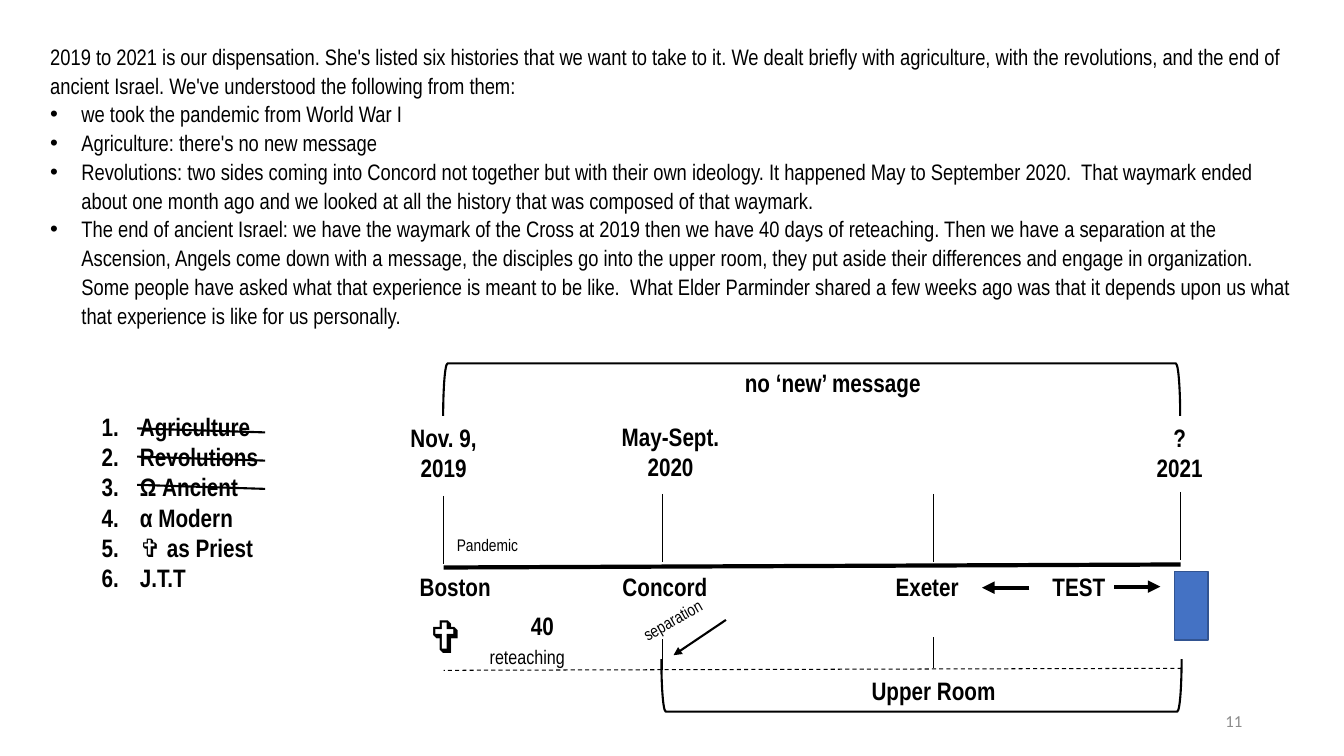
import dataclasses

import pptx
import pptx.dml.color
import pptx.enum.dml
import pptx.enum.shapes
import pptx.enum.text
import pptx.oxml.ns
import pptx.util
from lxml import etree

SHAPE = pptx.enum.shapes.MSO_SHAPE
ALIGN = pptx.enum.text.PP_ALIGN
ANCHOR = pptx.enum.text.MSO_ANCHOR
qn = pptx.oxml.ns.qn


@dataclasses.dataclass(frozen=True)
class Theme:
    ink: str = "000000"
    block: str = "4472C4"
    block_edge: str = "325491"
    muted: str = "8C8C8C"
    font: str = "Arial Narrow"
    number_font: str = "Calibri"
    small: int = 12
    note: int = 14
    body: int = 16
    label: int = 18
    symbol: int = 32
    hair: float = 0.75
    edge: float = 1
    medium: float = 1.5
    heavy: float = 3


def px(length):
    return pptx.util.Emu(length * 9144)


def rgb(value):
    return pptx.dml.color.RGBColor.from_string(value)


class Board:
    """Draws themed text, lines and shapes on one slide."""

    def __init__(self, slide, theme):
        self.shapes = slide.shapes
        self.theme = theme

    def text(self, lines, x, y, w, h, size, bold=False, align=ALIGN.CENTER,
             color=None, font=None, spacing=None, anchor=ANCHOR.TOP, turn=0):
        box = self.shapes.add_textbox(px(x), px(y), px(w), px(h))
        box.rotation = turn
        frame = box.text_frame
        frame.word_wrap = True
        frame.vertical_anchor = anchor
        for index, line in enumerate(lines):
            paragraph = frame.paragraphs[0] if index == 0 else frame.add_paragraph()
            paragraph.text = line
            paragraph.alignment = align
            paragraph.line_spacing = spacing
            paragraph.font.name = font or self.theme.font
            paragraph.font.size = pptx.util.Pt(size)
            paragraph.font.bold = bold
            paragraph.font.color.rgb = rgb(color or self.theme.ink)
        return frame.paragraphs

    def label(self, lines, x, y, w, h=40):
        self.text(lines, x, y, w, h, self.theme.label, bold=True)

    def bullets(self, paragraphs, indent, tag, **attributes):
        for paragraph in paragraphs:
            properties = paragraph._p.get_or_add_pPr()
            properties.set("marL", str(px(indent)))
            properties.set("indent", str(px(-indent)))
            if tag == "a:buChar":
                etree.SubElement(properties, qn("a:buFont"), typeface="Arial")
            mark = etree.SubElement(properties, qn(tag), **attributes)
            default = properties.find(qn("a:defRPr"))
            if default is not None:
                properties.remove(default)
                mark.addnext(default)

    def line(self, x1, y1, x2, y2, width, dashed=False, arrow=False):
        connector = self.shapes.add_connector(
            pptx.enum.shapes.MSO_CONNECTOR.STRAIGHT, px(x1), px(y1), px(x2), px(y2))
        connector.line.color.rgb = rgb(self.theme.ink)
        connector.line.width = pptx.util.Pt(width)
        if dashed:
            connector.line.dash_style = pptx.enum.dml.MSO_LINE.DASH
        if arrow:
            etree.SubElement(connector.line._get_or_add_ln(), qn("a:tailEnd"), type="triangle")
        etree.SubElement(connector._element.spPr, qn("a:effectLst"))

    def shape(self, kind, x, y, w, h, line, width, fill=None, turn=0):
        shape = self.shapes.add_shape(kind, px(x), px(y), px(w), px(h))
        shape.shadow.inherit = False
        shape.rotation = turn
        shape.line.color.rgb = rgb(line)
        shape.line.width = pptx.util.Pt(width)
        if fill:
            shape.fill.solid()
            shape.fill.fore_color.rgb = rgb(fill)
        else:
            shape.fill.background()

    def bracket(self, x, y, w, h, turn):
        self.shape(SHAPE.LEFT_BRACKET, x, y, w, h, self.theme.ink, self.theme.medium, turn=turn)


LESSONS = [
    "2019 to 2021 is our dispensation. She's listed six histories that we want to take to it. "
    "We dealt briefly with agriculture, with the revolutions, and the end of ancient Israel. "
    "We've understood the following from them:",
    "we took the pandemic from World War I",
    "Agriculture: there's no new message",
    "Revolutions: two sides coming into Concord not together but with their own ideology. "
    "It happened May to September 2020.  That waymark ended about one month ago and we looked "
    "at all the history that was composed of that waymark.",
    "The end of ancient Israel: we have the waymark of the Cross at 2019 then we have 40 days of "
    "reteaching. Then we have a separation at the Ascension, Angels come down with a message, "
    "the disciples go into the upper room, they put aside their differences and engage in "
    "organization. Some people have asked what that experience is meant to be like.  "
    "What Elder Parminder shared a few weeks ago was that it depends upon us what that "
    "experience is like for us personally.",
]
HISTORIES = ["Agriculture", "Revolutions", "Ω Ancient", "α Modern", "✞ as Priest", "J.T.T"]
BOSTON, CONCORD, EXETER, END = 440, 657, 926, 1171


def main():
    theme = Theme()
    deck = pptx.Presentation()
    deck.slide_width, deck.slide_height = px(1333), px(750)
    board = Board(deck.slides.add_slide(deck.slide_layouts[6]), theme)

    lessons = board.text(LESSONS, 40, 36, 1254, 297, theme.body, align=ALIGN.LEFT, spacing=1.07)
    board.bullets(lessons[1:], 31, "a:buChar", char="•")
    board.text(["11"], 942, 695, 300, 40, theme.small, align=ALIGN.RIGHT,
               color=theme.muted, font=theme.number_font, anchor=ANCHOR.MIDDLE)

    histories = board.text(HISTORIES, 91, 403, 304, 222, theme.label, bold=True, align=ALIGN.LEFT)
    board.bullets(histories, 38, "a:buAutoNum", type="arabicPeriod")
    for strike in range(425, 482, 28):
        board.line(136, strike, 263, strike + 4, theme.medium)

    board.line(BOSTON, 563, END, 560, theme.heavy)
    for waymark, top in ((BOSTON, 492), (CONCORD, 490), (EXETER, 490), (END, 488)):
        board.line(waymark, top, waymark, top + 68, theme.hair)
    for waymark, top in ((CONCORD, 634), (EXETER, 632)):
        board.line(waymark, top, waymark, top + 31, theme.hair)
    board.line(END + 1, 663, BOSTON, 665, theme.hair, dashed=True)

    board.bracket(779, 21, 52, 731, turn=90)
    board.bracket(888, 422, 52, 516, turn=270)
    board.shape(SHAPE.RECTANGLE, 1165, 567, 33, 68, theme.block_edge, theme.edge, theme.block)

    board.label(["Nov. 9,", "2019"], 390, 414, 100, 71)
    board.label(["May-Sept.", "2020"], 594, 413, 142, 74)
    board.label(["?", "2021"], 1099, 414, 142, 74)
    board.label(["no ‘new’ message"], 683, 359, 286)
    board.label(["Upper Room"], 783, 665, 286)
    for place, left in (("Boston", 391), ("Concord", 599), ("Exeter", 859)):
        board.label([place], left, 562, 121)
    board.label(["TEST"], 1020, 562, 100)
    board.label(["40"], 507, 601, 62)

    board.line(1105, 582, 1151, 582, theme.heavy, arrow=True)
    board.line(1021, 583, 974, 583, theme.heavy, arrow=True)
    board.line(720, 615, 668, 650, theme.medium, arrow=True)

    board.text(["Pandemic"], 440, 526, 87, 30, theme.small)
    board.text(["separation"], 608, 600, 118, 30, theme.small, turn=330.4)
    board.text(["reteaching"], 467, 635, 112, 34, theme.note)
    board.text(["✞"], 414, 599, 51, 64, theme.symbol, bold=True)
    deck.save("out.pptx")


if __name__ == "__main__":
    main()
